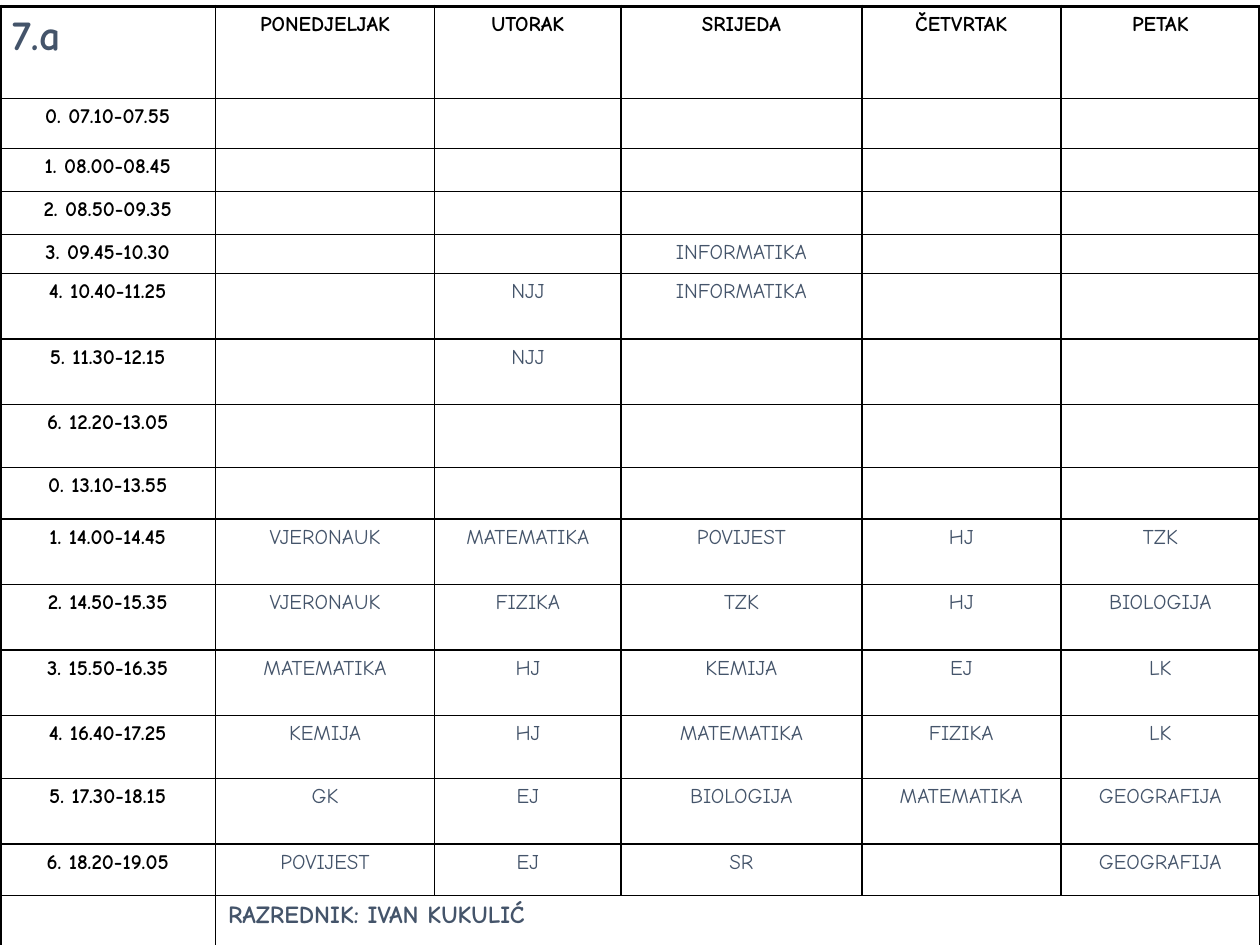
from lxml.etree import fromstring
from pptx import Presentation
from pptx.dml.color import RGBColor
from pptx.enum.text import PP_ALIGN
from pptx.oxml.ns import nsdecls
from pptx.util import Inches, Pt

FONT = "Comic Neue"
BLACK = RGBColor(0x00, 0x00, 0x00)
SLATE = RGBColor(0x44, 0x54, 0x6A)
THIN, THICK = 1, 2.25

COL_WIDTHS = [1.71, 1.74, 1.48, 1.91, 1.58, 1.58]
ROW_HEIGHTS = [0.73, 0.4, 0.34, 0.34, 0.31, 0.52, 0.52, 0.5,
               0.41, 0.52, 0.52, 0.52, 0.5, 0.52, 0.41, 0.41]

CLASS_NAME = "7.a"
CLASS_TEACHER = "RAZREDNIK: IVAN KUKULIĆ"
DAYS = ["PONEDJELJAK", "UTORAK", "SRIJEDA", "ČETVRTAK", "PETAK"]
FREE = [""] * len(DAYS)
LESSONS = [
    ("0. 07.10-07.55", FREE),
    ("1. 08.00-08.45", FREE),
    ("2. 08.50-09.35", FREE),
    ("3. 09.45-10.30", ["", "", "INFORMATIKA", "", ""]),
    ("4. 10.40-11.25", ["", "NJJ", "INFORMATIKA", "", ""]),
    ("5. 11.30-12.15", ["", "NJJ", "", "", ""]),
    ("6. 12.20-13.05", FREE),
    ("0. 13.10-13.55", FREE),
    ("1. 14.00-14.45", ["VJERONAUK", "MATEMATIKA", "POVIJEST", "HJ", "TZK"]),
    ("2. 14.50-15.35", ["VJERONAUK", "FIZIKA", "TZK", "HJ", "BIOLOGIJA"]),
    ("3. 15.50-16.35", ["MATEMATIKA", "HJ", "KEMIJA", "EJ", "LK"]),
    ("4. 16.40-17.25", ["KEMIJA", "HJ", "MATEMATIKA", "FIZIKA", "LK"]),
    ("5. 17.30-18.15", ["GK", "EJ", "BIOLOGIJA", "MATEMATIKA", "GEOGRAFIJA"]),
    ("6. 18.20-19.05", ["POVIJEST", "EJ", "SR", "", "GEOGRAFIJA"]),
]


def write_cell(cell, text, color=BLACK, size=12, bold=True, align=PP_ALIGN.CENTER):
    p = cell.text_frame.paragraphs[0]
    if not text:
        # An empty cell needs a small end mark, or its row grows
        p._p.get_or_add_endParaRPr().set("sz", str(size * 100))
        return
    p.text = text
    p.alignment = align
    p.font.name = FONT
    p.font.size = Pt(size)
    p.font.bold = bold
    p.font.color.rgb = color


def set_borders(cell, widths):
    """Draw the left, right, top and bottom borders, in that order."""
    tcPr = cell._tc.get_or_add_tcPr()
    for i, (side, width) in enumerate(zip("LRTB", widths)):
        tcPr.insert(i, fromstring(
            f'<a:ln{side} {nsdecls("a")} w="{Pt(width)}"><a:solidFill>'
            f'<a:srgbClr val="{BLACK}"/></a:solidFill></a:ln{side}>'))


def add_grid(slide):
    n_rows, n_cols = len(ROW_HEIGHTS), len(COL_WIDTHS)
    table = slide.shapes.add_table(n_rows, n_cols, 0, Inches(0.05),
                                   Inches(10), Inches(7.45)).table
    table.first_row = table.horz_banding = False
    for column, width in zip(table.columns, COL_WIDTHS):
        column.width = Inches(width)
    for row, height in zip(table.rows, ROW_HEIGHTS):
        row.height = Inches(height)

    # Thick outer frame, thin inner lines
    for r in range(n_rows):
        for c in range(n_cols):
            cell = table.cell(r, c)
            cell.fill.background()
            outer = (c == 0, c == n_cols - 1, r == 0, r == n_rows - 1)
            set_borders(cell, [THICK if edge else THIN for edge in outer])
    return table


def fill_timetable(table):
    # Header: class and days
    write_cell(table.cell(0, 0), CLASS_NAME, SLATE, 24, align=PP_ALIGN.LEFT)
    for c, day in enumerate(DAYS, 1):
        write_cell(table.cell(0, c), day)

    # Lessons: time, then one subject a day
    for r, (time, subjects) in enumerate(LESSONS, 1):
        write_cell(table.cell(r, 0), time)
        for c, subject in enumerate(subjects, 1):
            write_cell(table.cell(r, c), subject, SLATE, bold=False)

    # Footer: class teacher across all days
    last = len(LESSONS) + 1
    write_cell(table.cell(last, 0), "")
    table.cell(last, 1).merge(table.cell(last, len(DAYS)))
    write_cell(table.cell(last, 1), CLASS_TEACHER, SLATE, 14, align=PP_ALIGN.LEFT)


def main():
    prs = Presentation()
    prs.slide_width, prs.slide_height = Inches(10), Inches(7.5)
    slide = prs.slides.add_slide(prs.slide_layouts[6])
    fill_timetable(add_grid(slide))
    prs.save("out.pptx")


if __name__ == "__main__":
    main()
